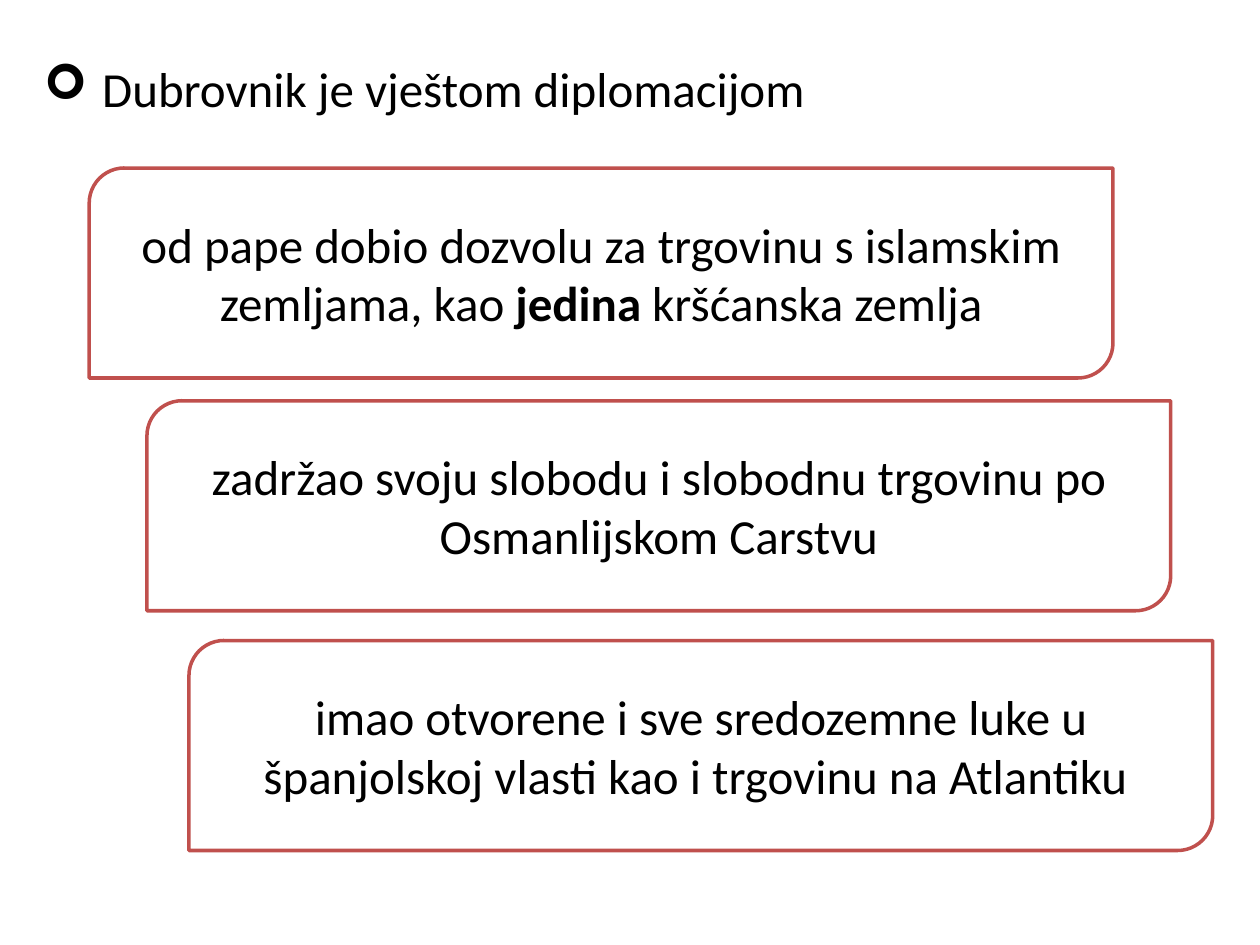
"""Build the slide on what Dubrovnik gained through diplomacy."""
import pptx
import pptx.dml.color
import pptx.enum.shapes
import pptx.enum.text
import pptx.oxml
import pptx.oxml.ns
import pptx.util

Pt = pptx.util.Pt
COLORS = {
    name: pptx.dml.color.RGBColor.from_string(value)
    for name, value in {"text": "000000", "card": "FFFFFF", "border": "C0504D"}.items()
}
ACHIEVEMENTS = [
    (51, 96, [
        ("od pape dobio dozvolu za trgovinu s islamskim zemljama, kao ", False),
        ("jedina", True),
        (" kršćanska zemlja", False),
    ]),
    (84, 229, [("zadržao svoju slobodu i slobodnu trgovinu po Osmanlijskom Carstvu", False)]),
    (108, 366, [
        ("imao otvorene i sve sredozemne luke u španjolskoj vlasti kao i trgovinu na Atlantiku ", False),
    ]),
]


def style_paragraph(paragraph):
    paragraph.font.name = "Calibri"
    paragraph.font.size = Pt(28)
    paragraph.font.color.rgb = COLORS["text"]


deck = pptx.Presentation()
deck.slide_width, deck.slide_height = Pt(720), Pt(540)
page = deck.slides.add_slide(deck.slide_layouts[6])

heading = page.shapes.add_textbox(Pt(18), Pt(30), Pt(623.5), Pt(67))
heading.text_frame.word_wrap = True
para = heading.text_frame.paragraphs[0]
para.add_run().text = " Dubrovnik je vještom diplomacijom"
properties = para._p.get_or_add_pPr()
properties.set("marL", str(Pt(27)))
properties.set("indent", str(-Pt(27)))
namespace = pptx.oxml.ns.nsdecls("a")
for bullet_xml in (
    f'<a:buFont {namespace} typeface="Wingdings"/>',
    f'<a:buChar {namespace} char="➢"/>',
):
    properties.append(pptx.oxml.parse_xml(bullet_xml))
style_paragraph(para)

for left, top, spans in ACHIEVEMENTS:
    card = page.shapes.add_shape(
        pptx.enum.shapes.MSO_SHAPE.ROUND_2_DIAG_RECTANGLE,
        Pt(left), Pt(top), Pt(585), Pt(120),
    )
    card.shadow.inherit = False
    card.fill.solid()
    card.fill.fore_color.rgb = COLORS["card"]
    card.line.color.rgb = COLORS["border"]
    card.line.width = Pt(2)
    card.text_frame.word_wrap = True
    card.text_frame.vertical_anchor = pptx.enum.text.MSO_ANCHOR.MIDDLE
    para = card.text_frame.paragraphs[0]
    para.alignment = pptx.enum.text.PP_ALIGN.CENTER
    style_paragraph(para)
    for text, bold in spans:
        span = para.add_run()
        span.text = text
        if bold:
            span.font.bold = True

deck.save("out.pptx")
